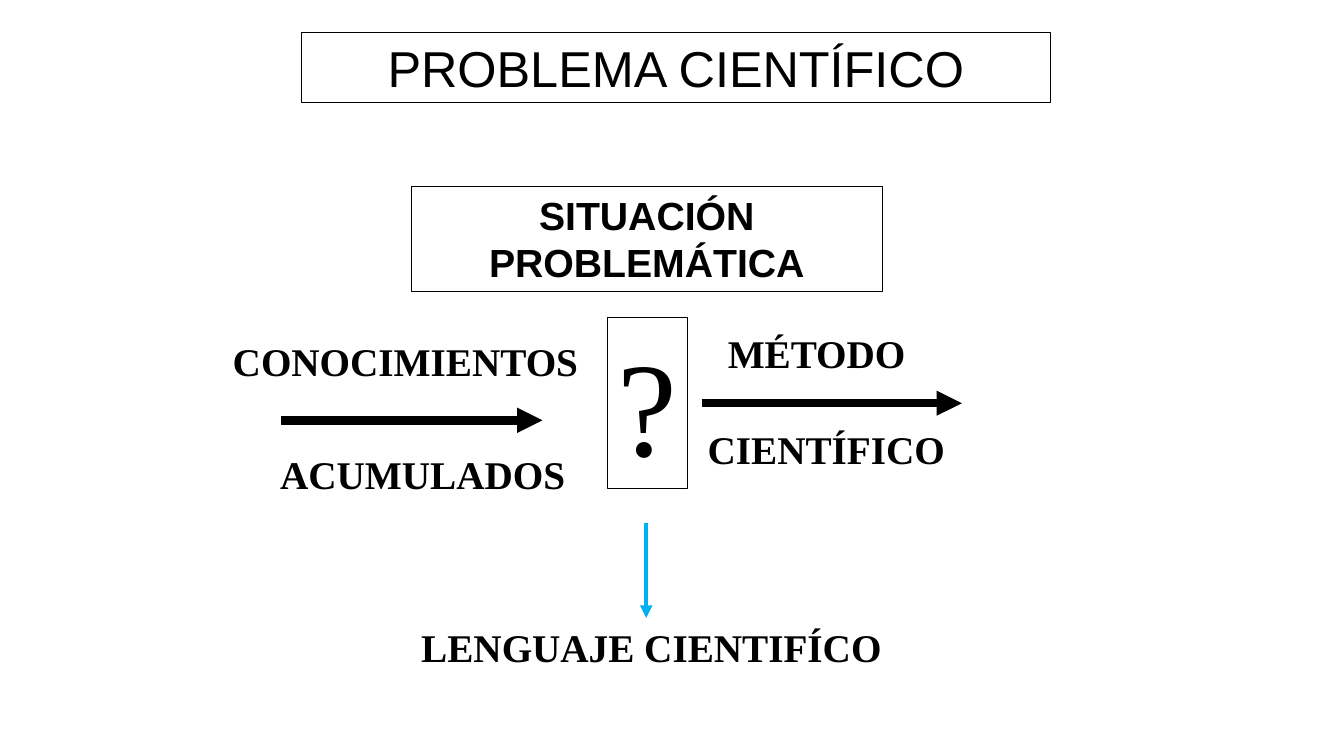
import pptx
import pptx.util
import pptx.dml.color
import pptx.enum.shapes
import pptx.enum.text
import pptx.oxml
import pptx.oxml.ns
from pptx.util import Inches

HUES = {"ink": "000000", "paper": "FFFFFF", "sky": "00B0F0"}
SANS, SERIF = "Arial", "Times New Roman"

BOXES = [
    ("PROBLEMA CIENTÍFICO", (2.99, 0.32, 7.43, 0.7), SANS, 36, False, True, None),
    ("SITUACIÓN PROBLEMÁTICA", (4.08, 1.85, 4.67, 1.04), SANS, 28, True, True, None),
    ("?", (6.03, 3.15, 0.79, 1.7), SERIF, 96, False, False, "paper"),
]
LABELS = [
    ("CONOCIMIENTOS", (2.21, 3.3, 3.92, 0.57)),
    ("ACUMULADOS", (2.68, 4.42, 3.03, 0.57)),
    ("MÉTODO", (7.12, 3.22, 2, 0.57)),
    ("CIENTÍFICO", (6.92, 4.17, 2.81, 0.57)),
    ("LENGUAJE CIENTIFÍCO", (4.08, 6.13, 5.67, 0.57)),
]
ARROWS = [
    ((2.79, 4.17, 5.38, 4.17), "ink", 6),
    ((6.96, 4, 9.54, 4), "ink", 6),
    ((6.41, 5.19, 6.41, 6.13), "sky", 3),
]


def color(name):
    return pptx.dml.color.RGBColor.from_string(HUES[name])


def write(shape, text, face, size, bold, wrap, align):
    frame = shape.text_frame
    frame.word_wrap = wrap
    frame.vertical_anchor = pptx.enum.text.MSO_ANCHOR.TOP
    para = frame.paragraphs[0]
    para.text = text
    para.alignment = align
    para.font.name = face
    para.font.size = pptx.util.Pt(size)
    para.font.bold = bold
    para.font.color.rgb = color("ink")


def add_box(slide, text, area, face, size, bold, wrap, fill):
    box = slide.shapes.add_shape(
        pptx.enum.shapes.MSO_SHAPE.RECTANGLE, *map(Inches, area))
    box.shadow.inherit = False
    if fill:
        box.fill.solid()
        box.fill.fore_color.rgb = color(fill)
    else:
        box.fill.background()
    box.line.color.rgb = color("ink")
    box.line.width = pptx.util.Pt(0.75)
    sides = pptx.enum.text.PP_ALIGN
    write(box, text, face, size, bold, wrap, sides.CENTER if wrap else sides.LEFT)


def add_label(slide, text, area):
    label = slide.shapes.add_textbox(*map(Inches, area))
    write(label, text, SERIF, 28, True, True, pptx.enum.text.PP_ALIGN.LEFT)


def add_arrow(slide, ends, hue, width):
    arrow = slide.shapes.add_connector(
        pptx.enum.shapes.MSO_CONNECTOR.STRAIGHT, *map(Inches, ends))
    arrow.line.color.rgb = color(hue)
    arrow.line.width = pptx.util.Pt(width)
    space = pptx.oxml.ns.nsdecls("a")
    arrow.line._get_or_add_ln().append(
        pptx.oxml.parse_xml(f'<a:tailEnd {space} type="triangle"/>'))
    arrow._element.spPr.append(pptx.oxml.parse_xml(f"<a:effectLst {space}/>"))


def main():
    deck = pptx.Presentation()
    deck.slide_width, deck.slide_height = Inches(13.33), Inches(7.5)
    slide = deck.slides.add_slide(deck.slide_layouts[6])
    for box in BOXES:
        add_box(slide, *box)
    for label in LABELS:
        add_label(slide, *label)
    for arrow in ARROWS:
        add_arrow(slide, *arrow)
    deck.save("out.pptx")


if __name__ == "__main__":
    main()
